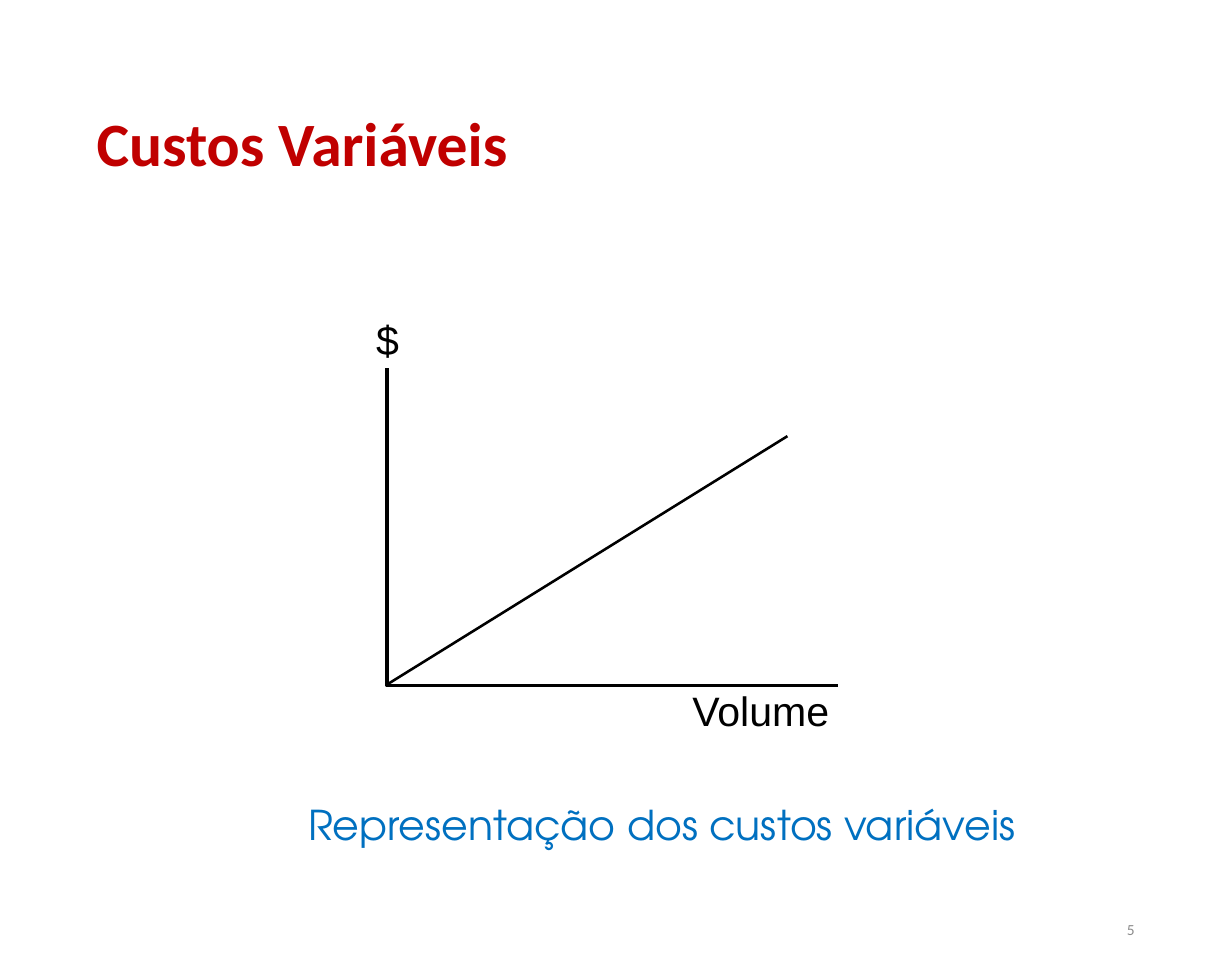
from lxml.etree import SubElement
from pptx import Presentation
from pptx.dml.color import RGBColor
from pptx.enum.shapes import MSO_CONNECTOR
from pptx.enum.text import MSO_ANCHOR, PP_ALIGN
from pptx.oxml.ns import qn
from pptx.util import Pt

PX = 7620
BLACK = RGBColor(0x00, 0x00, 0x00)
RED = RGBColor(0xC0, 0x00, 0x00)
BLUE = RGBColor(0x00, 0x70, 0xC0)
GRAY = RGBColor(0x8C, 0x8C, 0x8C)


def place(shape, box):
    """Move and size a shape to a box in px."""
    shape.left, shape.top, shape.width, shape.height = (length * PX for length in box)


def write(frame, text, font, size, color, alignment=PP_ALIGN.CENTER, bold=False):
    """Fill a text frame with one formatted run."""
    paragraph = frame.paragraphs[0]
    paragraph.alignment = alignment
    run = paragraph.add_run()
    run.text = text
    run.font.name = font
    run.font.size = Pt(size)
    run.font.bold = bold
    run.font.color.rgb = color
    return paragraph


def add_text(slide, box, text, font, size, color, alignment=PP_ALIGN.CENTER):
    """Add a wrapping text box and return its frame."""
    frame = slide.shapes.add_textbox(*(length * PX for length in box)).text_frame
    frame.word_wrap = True
    write(frame, text, font, size, color, alignment)
    return frame


def add_axis_label(slide, box, text):
    """Add an unwrapped axis label without margins."""
    frame = add_text(slide, box, text, "Arial", 24, BLACK)
    frame.word_wrap = False
    frame.margin_left = frame.margin_right = frame.margin_top = frame.margin_bottom = 0


def add_title(slide, box):
    """Format the title placeholder."""
    title = slide.shapes.title
    place(title, box)
    title.text_frame.vertical_anchor = MSO_ANCHOR.MIDDLE
    paragraph = write(title.text_frame, "Custos Variáveis", "Calibri", 36, RED,
                      PP_ALIGN.LEFT, bold=True)
    paragraph.line_spacing = 0.9


def add_cost_graph(slide, box):
    """Draw the axes, their labels and the rising cost line."""
    left, top, width, height = box
    bottom = top + height
    builder = slide.shapes.build_freeform(left, top, PX)
    builder.add_line_segments([(left, bottom), (left + width, bottom)], close=False)
    axes = builder.convert_to_shape()
    axes.shadow.inherit = False
    axes.fill.background()
    axes.line.color.rgb = BLACK
    axes.line.width = Pt(1.88)

    add_axis_label(slide, (left + 296, bottom, 136, 48), "Volume")
    add_axis_label(slide, (left - 11, top - 53, 23, 48), "$")

    ends = (left, bottom - 1, left + 390, top + 66)
    cost_line = slide.shapes.add_connector(MSO_CONNECTOR.STRAIGHT, *(end * PX for end in ends))
    SubElement(cost_line._element.spPr, qn("a:effectLst"))
    cost_line.line.color.rgb = BLACK
    cost_line.line.width = Pt(1.5)


def add_caption(slide, box):
    """Add the caption below the graph."""
    add_text(slide, box, "Representação dos custos variáveis", "TeX Gyre Adventor", 24, BLUE)


def add_slide_number(slide, box):
    """Add the slide number in the lower right corner."""
    frame = add_text(slide, box, "5", "Calibri", 9, GRAY, PP_ALIGN.RIGHT)
    frame.vertical_anchor = MSO_ANCHOR.MIDDLE


def main():
    """Build and save the slide."""
    presentation = Presentation()
    presentation.slide_width = 1200 * PX
    presentation.slide_height = 950 * PX
    slide = presentation.slides.add_slide(presentation.slide_layouts[5])
    add_title(slide, (82, 51, 1035, 184))
    add_slide_number(slide, (847, 880, 270, 51))
    add_cost_graph(slide, (377, 359, 439, 309))
    add_caption(slide, (144, 773, 1001, 60))
    presentation.save("out.pptx")


if __name__ == "__main__":
    main()
